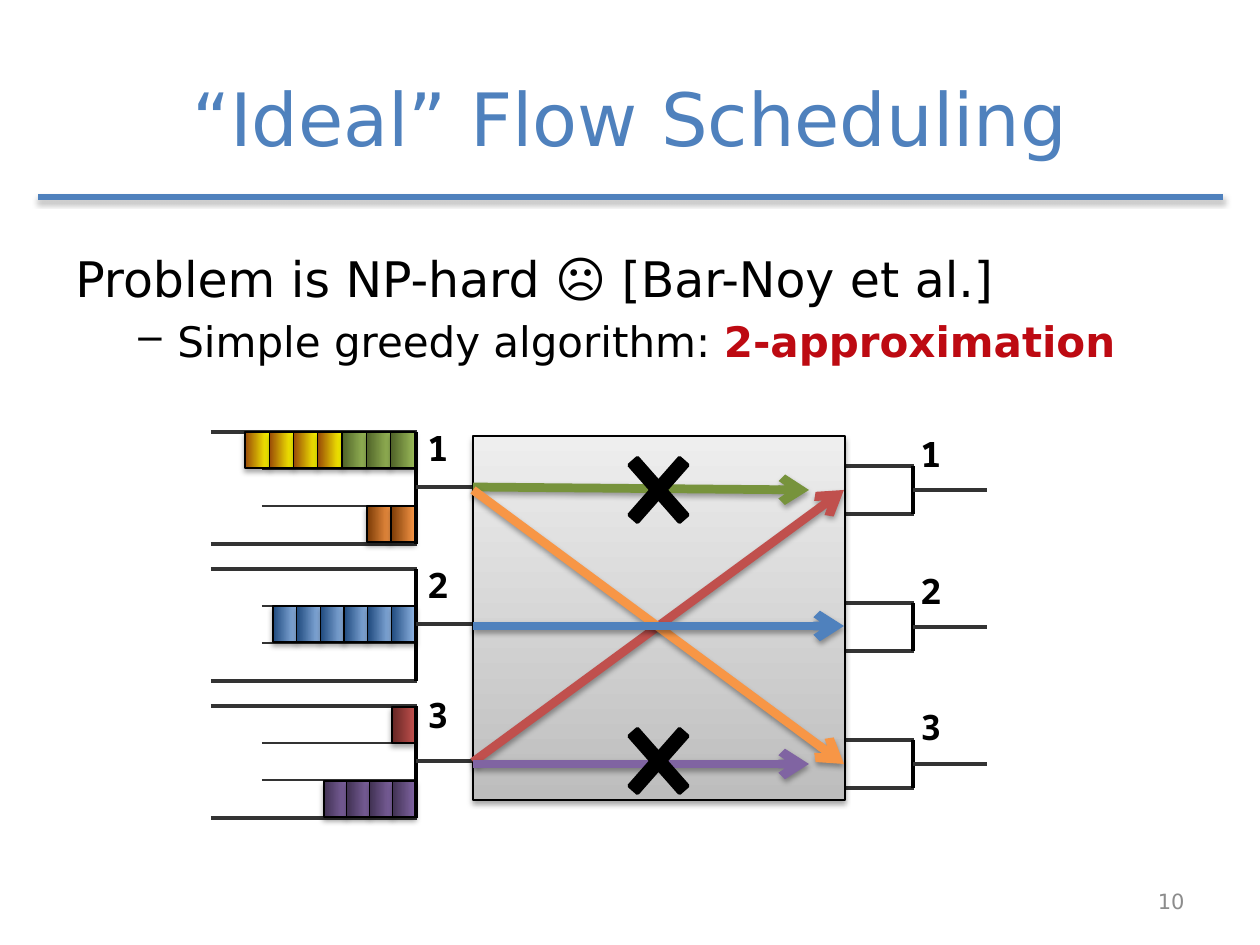
from lxml.etree import SubElement
from pptx import Presentation
from pptx.dml.color import RGBColor
from pptx.enum.shapes import MSO_CONNECTOR, MSO_SHAPE
from pptx.enum.text import MSO_ANCHOR, MSO_AUTO_SIZE, PP_ALIGN
from pptx.oxml.ns import qn
from pptx.util import Emu, Pt

PX_PER_INCH = 126
BLACK = RGBColor(0x00, 0x00, 0x00)
WIRE = RGBColor(0x33, 0x33, 0x33)
GREY = RGBColor(0x8C, 0x8C, 0x8C)
BLUE = RGBColor(0x4F, 0x81, 0xBD)
RED = RGBColor(0xC0, 0x50, 0x4D)
GREEN = RGBColor(0x77, 0x93, 0x3C)
ORANGE = RGBColor(0xF7, 0x96, 0x46)
PURPLE = RGBColor(0x80, 0x64, 0xA2)
KEYWORD = RGBColor(0xBD, 0x0A, 0x12)

# Gradients, from first to last colour
GREEN_RAMP = (RGBColor(0x4F, 0x62, 0x28), RGBColor(0x9B, 0xBB, 0x59))
YELLOW_RAMP = (RGBColor(0x98, 0x48, 0x07), RGBColor(0xFF, 0xFF, 0x00))
ORANGE_RAMP = (RGBColor(0x7A, 0x3A, 0x05), ORANGE)
BLUE_RAMP = (RGBColor(0x1F, 0x49, 0x7D), RGBColor(0x8E, 0xB4, 0xE3))
RED_RAMP = (RGBColor(0x63, 0x25, 0x23), RED)
PURPLE_RAMP = (RGBColor(0x40, 0x31, 0x52), PURPLE)
FABRIC_RAMP = (RGBColor(0xBD, 0xBD, 0xBD), RGBColor(0xEE, 0xEE, 0xEE))


def px(length):
    return Emu(round(length * 914400 / PX_PER_INCH))


class SlidePainter:
    font = "DejaVu Sans"
    label_font = "Noto Sans Mono"

    def __init__(self, page):
        self.page = page

    def effects(self, shape, shadow):
        """Replace the theme's effects by a soft drop shadow or by none."""
        effect_list = SubElement(shape.element.spPr, qn("a:effectLst"))
        if shadow:
            outer = SubElement(effect_list, qn("a:outerShdw"), blurRad=str(Pt(3.1)),
                               dist=str(Pt(1.8)), dir="5400000", rotWithShape="0")
            color = SubElement(outer, qn("a:srgbClr"), val="000000")
            SubElement(color, qn("a:alpha"), val="35000")

    def line(self, start, end, color=WIRE, width=2, arrow=False, shadow=False):
        line = self.page.shapes.add_connector(
            MSO_CONNECTOR.STRAIGHT, *map(px, (*start, *end)))
        line.line.color.rgb = color
        line.line.width = Pt(width)
        if arrow:
            SubElement(line.line._get_or_add_ln(), qn("a:tailEnd"), type="arrow")
        self.effects(line, shadow)

    def flow(self, start, end, color):
        self.line(start, end, color, 5, arrow=True, shadow=True)

    def gradient_box(self, left, top, width, height, ramp, angle=0):
        box = self.page.shapes.add_shape(
            MSO_SHAPE.RECTANGLE, *map(px, (left, top, width, height)))
        box.fill.gradient()
        box.fill.gradient_angle = angle
        for stop, color in zip(box.fill.gradient_stops, ramp):
            stop.color.rgb = color
        box.line.color.rgb = BLACK
        box.line.width = Pt(0.75)
        self.effects(box, shadow=True)

    def queue(self, left, top, ramps, right=415):
        """Draw equally wide packets that end at the port."""
        width = (right - left) / len(ramps)
        for index, ramp in enumerate(ramps):
            self.gradient_box(left + index * width, top, width, 36, ramp)

    def cross(self, left, top):
        cross = self.page.shapes.add_shape(
            MSO_SHAPE.MATH_MULTIPLY, *map(px, (left, top, 97, 110)))
        cross.adjustments[0] = 0.116
        cross.fill.solid()
        cross.fill.fore_color.rgb = BLACK
        cross.line.color.rgb = BLACK
        cross.line.width = Pt(2)
        self.effects(cross, shadow=False)

    def text(self, left, top, width, height, paragraphs, align=PP_ALIGN.LEFT,
             anchor=MSO_ANCHOR.TOP, wrap=True, font=font):
        """Each paragraph is a size and a list of (text, color, bold) spans."""
        box = self.page.shapes.add_textbox(*map(px, (left, top, width, height)))
        frame = box.text_frame
        frame.word_wrap = wrap
        frame.vertical_anchor = anchor
        if not wrap:
            frame.auto_size = MSO_AUTO_SIZE.SHAPE_TO_FIT_TEXT
        for index, (size, spans) in enumerate(paragraphs):
            para = frame.add_paragraph() if index else frame.paragraphs[0]
            para.alignment = align
            for words, color, bold in spans:
                span = para.add_run()
                span.text = words
                span.font.name = font
                span.font.size = Pt(size)
                span.font.bold = bold
                span.font.color.rgb = color
        return frame

    def label(self, left, top, number):
        self.text(left, top, 48, 55, [(20, [(str(number), BLACK, True)])],
                  wrap=False, font=self.label_font)

    def input_port(self, top):
        bottom = top + 112
        for y in (top, bottom):
            self.line((211, y), (417, y))
        for y in (top + 37, top + 74):
            self.line((262, y), (414, y), width=1.25)
        self.line((416, top), (416, bottom), BLACK)
        self.line((416, top + 55), (491, top + 55))

    def output_port(self, top):
        bottom = top + 48
        for y in (top, bottom):
            self.line((820, y), (914, y))
        self.line((913, top), (913, bottom), BLACK)
        self.line((913, top + 24), (987, top + 24))


def main():
    deck = Presentation()
    deck.slide_width, deck.slide_height = px(1260), px(945)
    painter = SlidePainter(deck.slides.add_slide(deck.slide_layouts[6]))

    painter.line((1223, 197), (38, 197), BLUE, 3, shadow=True)
    painter.text(63, 38, 1134, 158, [(42, [("“Ideal” Flow Scheduling", BLUE, False)])],
                 PP_ALIGN.CENTER, MSO_ANCHOR.MIDDLE)
    body = painter.text(63, 242, 1134, 602, [
        (28, [("Problem is NP-hard ", BLACK, False), ("☹", BLACK, True),
              (" [Bar-Noy et al.]", BLACK, False)]),
        (24, [("Simple greedy algorithm: ", BLACK, False),
              ("2-approximation", KEYWORD, True)]),
    ])
    problem, greedy = body.paragraphs
    problem.space_before = Pt(5.6)
    greedy.space_before = Pt(4.8)
    greedy.level = 1
    properties = greedy._p.get_or_add_pPr()
    properties.set("marL", str(px(102)))
    properties.set("indent", str(-px(39)))
    SubElement(properties, qn("a:buChar"), char="–")

    label_tops = ((420, 426), (557, 563), (687, 699))
    for row, (input_label, output_label) in enumerate(label_tops):
        painter.input_port(432 + 137 * row)
        painter.output_port(466 + 137 * row)
        painter.label(415, input_label, row + 1)
        painter.label(908, output_label, row + 1)
    painter.gradient_box(473, 436, 372, 364, FABRIC_RAMP, angle=90)

    painter.queue(245, 432, [YELLOW_RAMP] * 4 + [GREEN_RAMP] * 3)
    painter.queue(367, 506, [ORANGE_RAMP] * 2)
    painter.queue(273, 606, [BLUE_RAMP] * 6)
    painter.queue(392, 707, [RED_RAMP])
    painter.queue(324, 781, [PURPLE_RAMP] * 4)

    painter.flow((473, 762), (844, 490), RED)
    painter.flow((473, 487), (809, 490), GREEN)
    painter.cross(610, 435)
    painter.flow((473, 490), (844, 764), ORANGE)
    painter.flow((473, 764), (809, 764), PURPLE)
    painter.cross(610, 706)
    painter.flow((473, 626), (844, 626), BLUE)

    painter.text(903, 876, 294, 50, [(12, [("10", GREY, False)])],
                 PP_ALIGN.RIGHT, MSO_ANCHOR.MIDDLE)
    deck.save("out.pptx")


if __name__ == "__main__":
    main()
